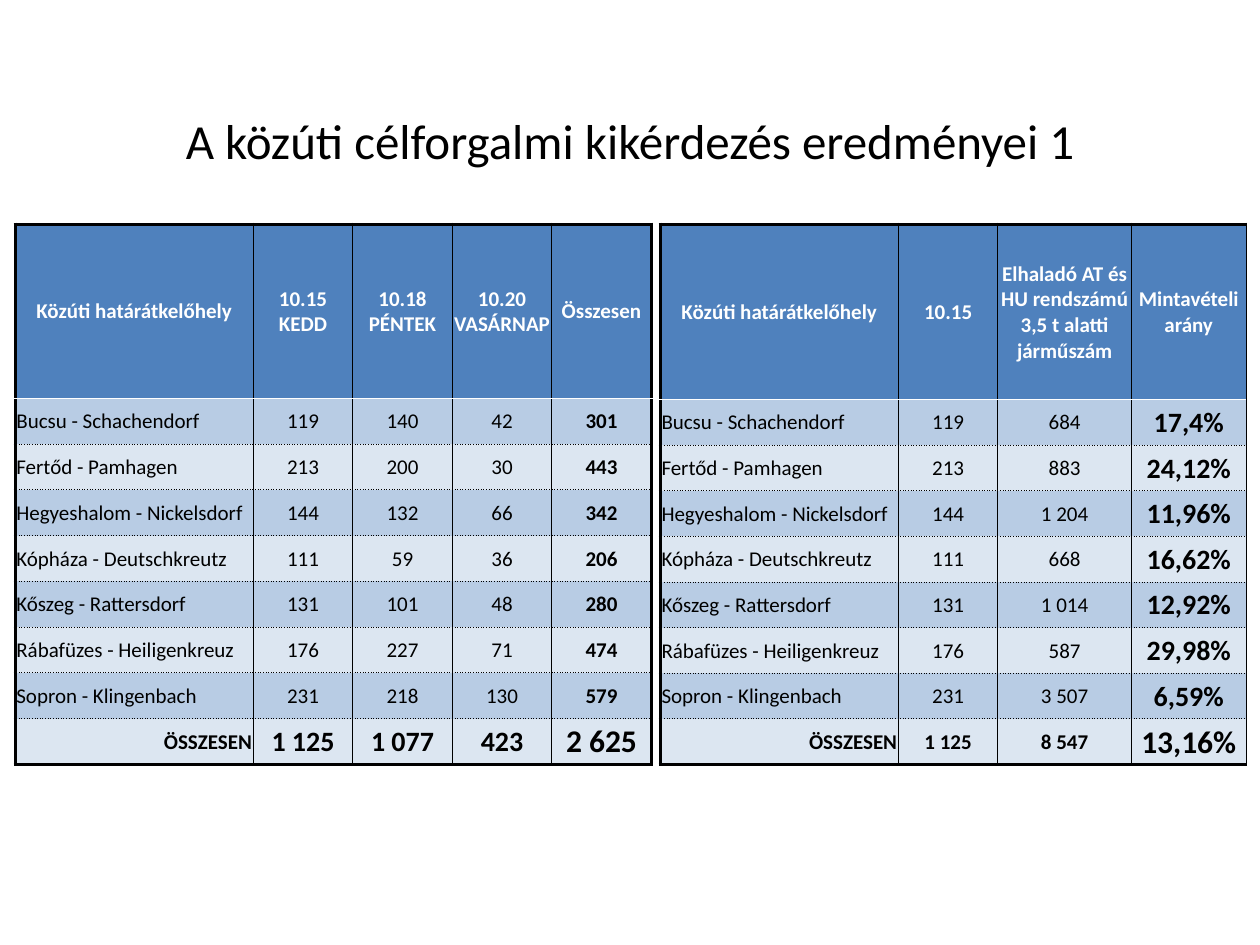
from lxml import etree
from pptx import Presentation
from pptx.dml.color import RGBColor
from pptx.enum.text import MSO_ANCHOR, PP_ALIGN
from pptx.oxml.ns import qn
from pptx.util import Inches, Pt

LEFT, CENTER, RIGHT = PP_ALIGN.LEFT, PP_ALIGN.CENTER, PP_ALIGN.RIGHT
MIDDLE = MSO_ANCHOR.MIDDLE
FONT = "Calibri"
COLORS = {
    "text": "000000",
    "header_text": "FFFFFF",
    "header": "4F81BD",
    "odd_row": "B8CCE4",
    "even_row": "DCE6F1",
    "border": "000000",
    "header_rule": "FFFFFF",
}
THIN = ("border", 0.5, "solid")
THICK = ("border", 2, "solid")
DOTTED = ("border", 0.5, "sysDot")
HEADER_RULE = ("header_rule", 0.5, "solid")

CROSSINGS = [
    "Bucsu - Schachendorf",
    "Fertőd - Pamhagen",
    "Hegyeshalom - Nickelsdorf",
    "Kópháza - Deutschkreutz",
    "Kőszeg - Rattersdorf",
    "Rábafüzes - Heiligenkreuz",
    "Sopron - Klingenbach",
]
ROW_LABELS = ["Közúti határátkelőhely", *CROSSINGS, "ÖSSZESEN"]
TUESDAY = ["119", "213", "144", "111", "131", "176", "231", "1 125"]
INTERVIEWS = [
    ["10.15 KEDD", *TUESDAY],
    ["10.18 PÉNTEK", "140", "200", "132", "59", "101", "227", "218", "1 077"],
    ["10.20 VASÁRNAP", "42", "30", "66", "36", "48", "71", "130", "423"],
    ["Összesen", "301", "443", "342", "206", "280", "474", "579", "2 625"],
]
SAMPLING = [
    ["10.15", *TUESDAY],
    ["Elhaladó AT és HU rendszámú 3,5 t alatti járműszám",
     "684", "883", "1 204", "668", "1 014", "587", "3 507", "8 547"],
    ["Mintavételi arány", "17,4%", "24,12%", "11,96%", "16,62%", "12,92%",
     "29,98%", "6,59%", "13,16%"],
]


def format_text(paragraph, size, color, bold=False, alignment=CENTER):
    paragraph.alignment = alignment
    for run in paragraph.runs:
        run.font.name = FONT
        run.font.size = Pt(size)
        run.font.bold = bold
        run.font.color.rgb = RGBColor.from_string(COLORS[color])


def set_borders(cell, left, right, top, bottom):
    properties = cell._tc.get_or_add_tcPr()
    sides = zip(("a:lnL", "a:lnR", "a:lnT", "a:lnB"), (left, right, top, bottom))
    for position, (tag, (color, width, dash)) in enumerate(sides):
        line = etree.Element(qn(tag), w=str(Pt(width)))
        fill = etree.SubElement(line, qn("a:solidFill"))
        etree.SubElement(fill, qn("a:srgbClr"), val=COLORS[color])
        etree.SubElement(line, qn("a:prstDash"), val=dash)
        properties.insert(position, line)


def add_title(slide, left, top, width, height):
    frame = slide.shapes.add_textbox(left, top, width, height).text_frame
    frame.word_wrap = True
    frame.vertical_anchor = MIDDLE
    frame.text = "A közúti célforgalmi kikérdezés eredményei 1"
    format_text(frame.paragraphs[0], 28, "text")


def add_crossing_table(slide, left, top, height, widths, header_height, columns,
                       result_size, total_size, right_edge):
    """Add a table by border crossing; its last column holds the results."""
    columns = [ROW_LABELS, *columns]
    row_count, last_row, last_column = len(ROW_LABELS), len(ROW_LABELS) - 1, len(columns) - 1
    table = slide.shapes.add_table(row_count, len(columns), left, top,
                                   Inches(sum(widths)), height).table
    table.first_row = table.horz_banding = False
    for column, width in zip(table.columns, widths):
        column.width = Inches(width)
    for row in table.rows:
        row.height = (height - header_height) // last_row
    table.rows[0].height = header_height

    for row in range(row_count):
        is_header, is_total = row == 0, row == last_row
        row_fill = "header" if is_header else "odd_row" if row % 2 else "even_row"
        top_border = THICK if is_header else HEADER_RULE if row == 1 else DOTTED
        bottom_border = HEADER_RULE if is_header else THICK if is_total else DOTTED
        for column, texts in enumerate(columns):
            is_label, is_result = column == 0, column == last_column
            cell = table.cell(row, column)
            cell.text_frame.text = texts[row]
            cell.vertical_anchor = MIDDLE
            cell.margin_left = cell.margin_right = cell.margin_top = Inches(0.01)
            cell.margin_bottom = 0
            cell.fill.solid()
            cell.fill.fore_color.rgb = RGBColor.from_string(COLORS[row_fill])

            size, alignment = 12, CENTER
            if is_label and not is_header:
                alignment = RIGHT if is_total else LEFT
            elif is_total:
                size = 18 if is_result else total_size
            elif is_result and not is_header:
                size = result_size
            format_text(cell.text_frame.paragraphs[0], size,
                        "header_text" if is_header else "text",
                        is_header or is_total or is_result, alignment)
            set_borders(cell, THICK if is_label else THIN,
                        right_edge if is_result else THIN, top_border, bottom_border)


def main():
    presentation = Presentation()
    presentation.slide_width, presentation.slide_height = Inches(10), Inches(7.5)
    slide = presentation.slides.add_slide(presentation.slide_layouts[6])
    add_title(slide, 0, Inches(0.84), presentation.slide_width, Inches(0.54))
    table_top, table_height = Inches(1.78), Inches(4.29)
    add_crossing_table(slide, Inches(5.24), table_top, table_height,
                       [1.89, 0.79, 1.06, 0.91], Inches(1.39), SAMPLING,
                       result_size=16, total_size=12, right_edge=THIN)
    add_crossing_table(slide, Inches(0.12), table_top, table_height,
                       [1.89] + [0.79] * 4, Inches(1.38), INTERVIEWS,
                       result_size=12, total_size=16, right_edge=THICK)
    presentation.save("out.pptx")


if __name__ == "__main__":
    main()
